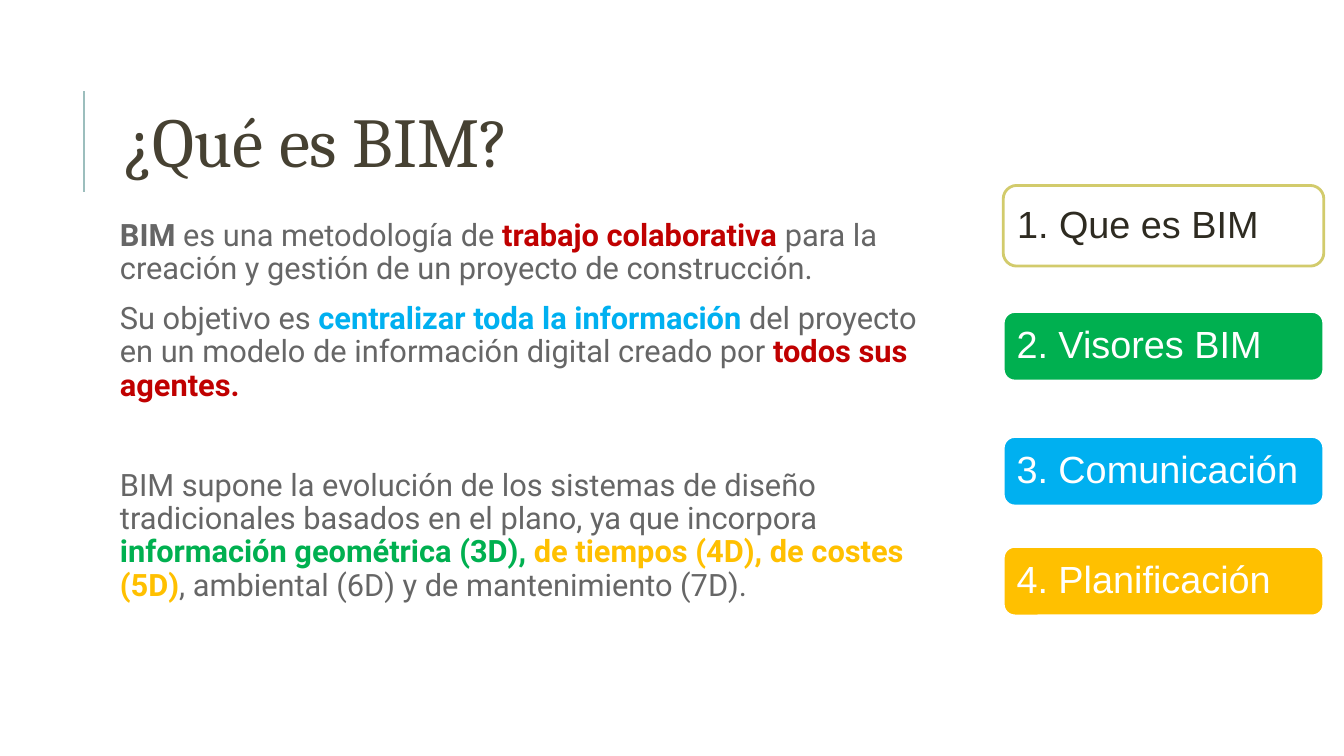
import dataclasses

import pptx
import pptx.dml.color
import pptx.enum.shapes
import pptx.enum.text
import pptx.oxml
import pptx.oxml.ns
import pptx.slide
import pptx.text.text
import pptx.util

Inches = pptx.util.Inches
Pt = pptx.util.Pt
RGBColor = pptx.dml.color.RGBColor
Anchor = pptx.enum.text.MSO_ANCHOR
Align = pptx.enum.text.PP_ALIGN

WHITE = RGBColor(0xFF, 0xFF, 0xFF)
BROWN = RGBColor(0x46, 0x41, 0x32)
INK = RGBColor(0x2E, 0x2B, 0x21)
GRAY = RGBColor(0x66, 0x66, 0x66)
TEAL = RGBColor(0x9C, 0xBE, 0xBD)
OLIVE = RGBColor(0xD2, 0xCB, 0x6C)
RED = RGBColor(0xC0, 0x00, 0x00)
GREEN = RGBColor(0x00, 0xB0, 0x50)
BLUE = RGBColor(0x00, 0xB0, 0xF0)
AMBER = RGBColor(0xFF, 0xC0, 0x00)


@dataclasses.dataclass(frozen=True)
class Span:
    text: str
    color: RGBColor = GRAY
    bold: bool = False


@dataclasses.dataclass(frozen=True)
class Para:
    spans: tuple[Span, ...]
    before: float = 12


@dataclasses.dataclass(frozen=True)
class Step:
    text: str
    top: float
    fill: RGBColor
    height: float = 0.69
    line: RGBColor = WHITE
    ink: RGBColor = WHITE


BODY = (
    Para((
        Span("BIM ", bold=True),
        Span("es una metodología de "),
        Span("trabajo colaborativa ", RED, True),
        Span("para la creación y gestión de un proyecto de construcción."),
    )),
    Para((
        Span("Su objetivo es "),
        Span("centralizar toda la información ", BLUE, True),
        Span("del proyecto en un modelo de información digital creado por "),
        Span("todos sus agentes.", RED, True),
    )),
    Para((
        Span("BIM supone la evolución de los sistemas de diseño tradicionales "
             "basados en el plano, ya que incorpora "),
        Span("información geométrica (3D), ", GREEN, True),
        Span("de tiempos (4D), de costes (5D)", AMBER, True),
        Span(", ambiental (6D) y de mantenimiento (7D)."),
    ), before=48),
)

STEPS = (
    Step("1. Que es BIM", 1.84, WHITE, 0.8, OLIVE, INK),
    Step("2. Visores BIM", 3.09, GREEN),
    Step("3. Comunicación", 4.33, BLUE),
    Step("4. Planificación", 5.42, AMBER),
)


def set_all(target: object, values: dict[str, object]) -> None:
    for name, value in values.items():
        setattr(target, name, value)


def set_frame(frame: pptx.text.text.TextFrame, side: float, anchor: Anchor) -> None:
    set_all(frame, {
        "word_wrap": True,
        "auto_size": pptx.enum.text.MSO_AUTO_SIZE.NONE,
        "vertical_anchor": anchor,
        "margin_left": Inches(side),
        "margin_right": Inches(side),
        "margin_top": Inches(0.05),
        "margin_bottom": Inches(0.05),
    })


def add_run(para: pptx.text.text._Paragraph, span: Span, font: str, size: float) -> None:
    run = para.add_run()
    run.text = span.text
    set_all(run.font, {"name": font, "size": Pt(size), "bold": span.bold})
    run.font.color.rgb = span.color


def add_title(slide: pptx.slide.Slide) -> None:
    title = slide.shapes.title
    set_all(title, {
        "left": Inches(1.12), "top": Inches(0.64),
        "width": Inches(10.63), "height": Inches(1.64),
    })
    set_frame(title.text_frame, 0.1, Anchor.MIDDLE)
    para = title.text_frame.paragraphs[0]
    set_all(para, {"alignment": Align.LEFT, "line_spacing": 0.8})
    add_run(para, Span("¿Qué es BIM?", BROWN), "Cambria", 50)


def add_rule(slide: pptx.slide.Slide) -> None:
    rule = slide.shapes.add_connector(
        pptx.enum.shapes.MSO_CONNECTOR.STRAIGHT,
        Inches(0.83), Inches(1.9), Inches(0.83), Inches(0.9))
    rule.line.color.rgb = TEAL
    rule.line.width = Pt(1.5)
    props = rule._element.find(pptx.oxml.ns.qn("p:spPr"))
    props.append(pptx.oxml.parse_xml(
        f"<a:effectLst {pptx.oxml.ns.nsdecls('a')}/>"))


def add_body(slide: pptx.slide.Slide) -> None:
    box = slide.shapes.add_textbox(
        Inches(1.14), Inches(2.13), Inches(8.33), Inches(4.4))
    set_frame(box.text_frame, 0.05, Anchor.TOP)
    for index, item in enumerate(BODY):
        para = box.text_frame.add_paragraph() if index else box.text_frame.paragraphs[0]
        set_all(para, {"line_spacing": 0.9, "space_before": Pt(item.before)})
        for span in item.spans:
            add_run(para, span, "Roboto", 22)


def add_step(slide: pptx.slide.Slide, step: Step) -> None:
    card = slide.shapes.add_shape(
        pptx.enum.shapes.MSO_SHAPE.ROUNDED_RECTANGLE,
        Inches(9.95), Inches(step.top), Inches(3.18), Inches(step.height))
    card.shadow.inherit = False
    card.fill.solid()
    card.fill.fore_color.rgb = step.fill
    card.line.color.rgb = step.line
    card.line.width = Pt(2)
    set_frame(card.text_frame, 0.1, Anchor.MIDDLE)
    para = card.text_frame.paragraphs[0]
    set_all(para, {"alignment": Align.LEFT, "line_spacing": 0.9})
    add_run(para, Span(step.text, step.ink), "Arial", 27)


def main() -> None:
    deck = pptx.Presentation()
    set_all(deck, {"slide_width": Inches(13.33), "slide_height": Inches(7.5)})
    slide = deck.slides.add_slide(deck.slide_layouts.get_by_name("Title Only"))
    add_rule(slide)
    add_title(slide)
    add_body(slide)
    for step in STEPS:
        add_step(slide, step)
    deck.save("out.pptx")


if __name__ == "__main__":
    main()
